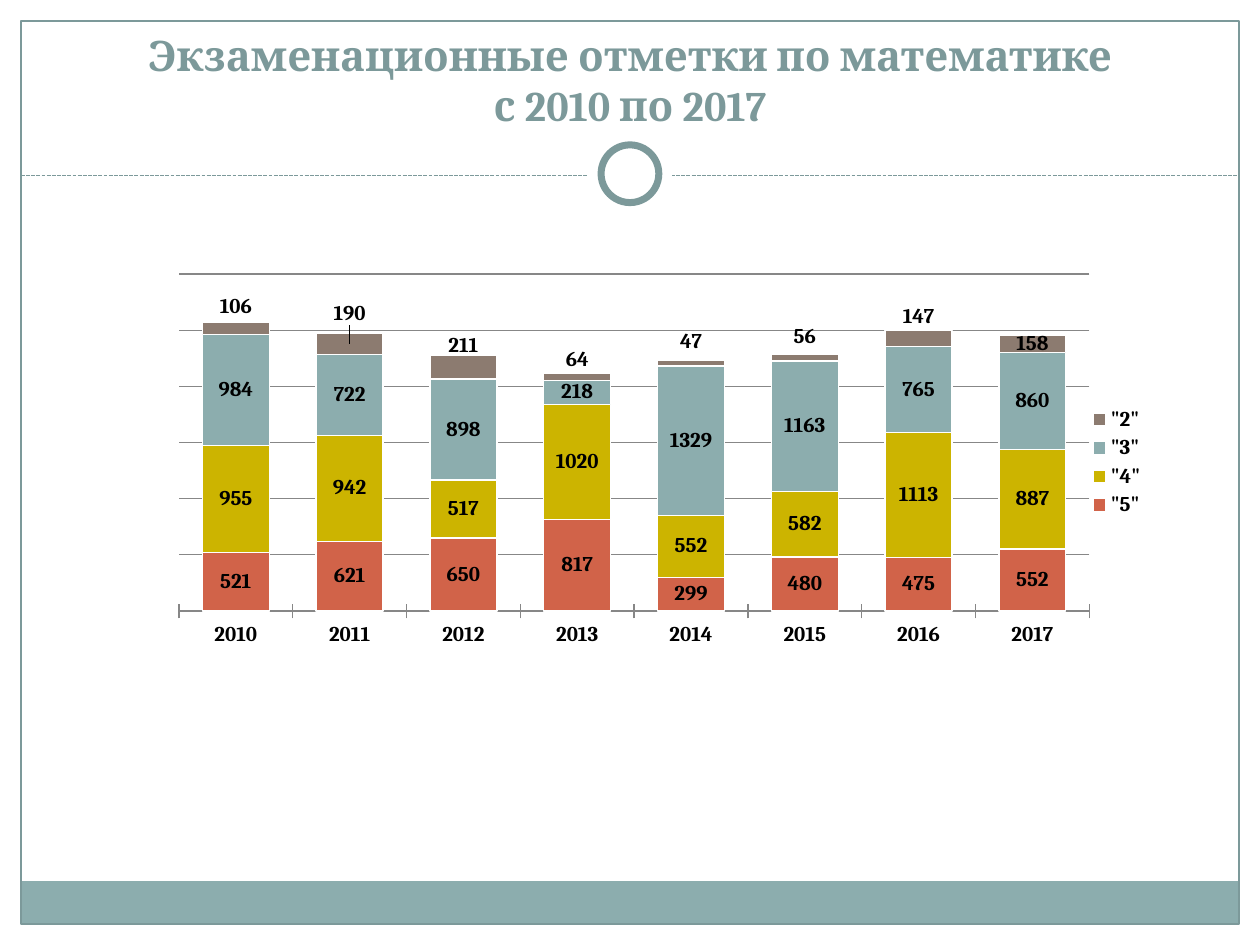
from lxml import etree
from pptx import Presentation
from pptx.chart.data import CategoryChartData
from pptx.dml.color import RGBColor
from pptx.enum.chart import XL_CHART_TYPE, XL_LEGEND_POSITION, XL_TICK_MARK
from pptx.enum.dml import MSO_LINE
from pptx.enum.shapes import MSO_CONNECTOR, MSO_SHAPE
from pptx.enum.text import MSO_ANCHOR, PP_ALIGN
from pptx.oxml.ns import qn
from pptx.util import Pt

STACK = XL_CHART_TYPE.COLUMN_STACKED
RIGHT = XL_LEGEND_POSITION.RIGHT
CROSS = XL_TICK_MARK.CROSS
DASH = MSO_LINE.SQUARE_DOT
LINE = MSO_CONNECTOR.STRAIGHT
RECT, OVAL = MSO_SHAPE.RECTANGLE, MSO_SHAPE.OVAL
BOTTOM, CENTER = MSO_ANCHOR.BOTTOM, PP_ALIGN.CENTER

FACE = "Cambria"
TEAL, PALE, WHITE, BLACK, GRAY = "7C999A", "8CADAE", "FFFFFF", "000000", "878787"
BOLD = {"size": Pt(12), "bold": True, "name": FACE}

YEARS = [str(year) for year in range(2010, 2018)]
MARKS = [
    ('"5"', "D16349", (521, 621, 650, 817, 299, 480, 475, 552)),
    ('"4"', "CCB400", (955, 942, 517, 1020, 552, 582, 1113, 887)),
    ('"3"', PALE, (984, 722, 898, 218, 1329, 1163, 765, 860)),
    ('"2"', "8C7B70", (106, 190, 211, 64, 47, 56, 147, 158)),
]
LIFTS = (-0.05, -0.07, -0.05, -0.04, -0.05, -0.05, -0.05)


def tint(part, code):
    part.solid()
    part.fore_color.rgb = RGBColor.from_string(code)


def style(item, values):
    for name, value in values.items():
        setattr(item, name, value)


def stroke(line, code, width):
    tint(line.fill, code)
    line.width = Pt(width)


def shape(slide, kind, box, fill=None, edge=None, width=0.75):
    item = slide.shapes.add_shape(kind, *map(Pt, box))
    item.shadow.inherit = False
    if fill:
        tint(item.fill, fill)
    else:
        item.fill.background()
    if edge:
        stroke(item.line, edge, width)
    else:
        item.line.fill.background()
    return item


def add_frame(slide, box):
    left, top, wide, high = box
    band = 24.5
    shape(slide, RECT, (left, top + high - band, wide, band), PALE)
    shape(slide, RECT, box, edge=TEAL)


def add_rule(slide, box):
    left, top, wide, high = box
    mid, axis = top + high / 2, left + wide / 2
    rule = slide.shapes.add_connector(LINE, Pt(left), Pt(mid), Pt(left + wide), Pt(mid))
    stroke(rule.line, TEAL, 0.75)
    rule.line.dash_style = DASH
    etree.SubElement(rule._element.spPr, qn("a:effectLst"))
    shape(slide, OVAL, (axis - high / 2, top, high, high), WHITE)
    ring = 33
    shape(slide, OVAL, (axis - ring / 2, mid - ring / 2 - 1.2, ring, ring), WHITE, TEAL, 4)


def add_title(slide, box, text):
    title = slide.shapes.title
    style(title, dict(zip(("left", "top", "width", "height"), map(Pt, box))))
    frame = title.text_frame
    style(frame, {"text": text, "vertical_anchor": BOTTOM, "word_wrap": True})
    para = frame.paragraphs[0]
    para.alignment = CENTER
    font = para.runs[0].font
    for run in para.runs:
        font = run.font
        style(font, {"size": Pt(24), "bold": True, "name": FACE})
        tint(font.fill, TEAL)


def set_layout(parent, spot, values):
    for old in parent.findall(qn("c:layout")):
        parent.remove(old)
    layout = etree.Element(qn("c:layout"))
    manual = etree.SubElement(layout, qn("c:manualLayout"))
    for name, value in values.items():
        etree.SubElement(manual, qn("c:" + name)).set("val", str(value))
    parent.insert(spot, layout)


def lift_labels(series):
    for index in range(len(LIFTS)):
        style(series.points[index].data_label.font, BOLD)
    for label, lift in zip(series._element.iter(qn("c:dLbl")), LIFTS):
        set_layout(label, 1, {"x": 0, "y": lift})


def add_graph(slide, box):
    data = CategoryChartData()
    data.categories = YEARS
    for name, _, values in MARKS:
        data.add_series(name, values)
    chart = slide.shapes.add_chart(STACK, *map(Pt, box), data).chart
    style(chart, {"has_title": False, "has_legend": True})
    style(chart.font, {"size": Pt(10), "name": FACE})
    tint(chart.font.fill, BLACK)
    style(chart.legend, {"position": RIGHT, "include_in_layout": False})
    style(chart.legend.font, BOLD)

    axis = chart.category_axis
    axis.major_tick_mark = CROSS
    style(axis.tick_labels.font, BOLD)
    stroke(axis.format.line, GRAY, 0.75)
    scale = chart.value_axis
    style(scale, {"visible": False, "minimum_scale": 0, "maximum_scale": 3000,
                  "major_unit": 500, "has_major_gridlines": True})
    stroke(scale.major_gridlines.format.line, GRAY, 0.75)

    plot = chart.plots[0]
    style(plot, {"gap_width": 70, "overlap": 100, "vary_by_categories": False})
    for series, (_, code, _) in zip(plot.series, MARKS):
        tint(series.format.fill, code)
        stroke(series.format.line, WHITE, 0.75)
        labels = series.data_labels
        labels.show_value = True
        style(labels.font, BOLD)
    lift_labels(plot.series[-1])
    area = chart._chartSpace.chart.plotArea
    set_layout(area, 0, {"layoutTarget": "inner", "xMode": "edge", "yMode": "edge",
                         "x": 0.024, "y": 0.058, "w": 0.908, "h": 0.791})


def main():
    deck = Presentation()
    style(deck, {"slide_width": Pt(720), "slide_height": Pt(540)})
    slide = deck.slides.add_slide(deck.slide_layouts[5])
    add_frame(slide, (12, 12, 696, 516))
    add_rule(slide, (12, 76.5, 696, 48))
    add_title(slide, (24, 18, 672, 60), "Экзаменационные отметки по математике\vс 2010 по 2017")
    add_graph(slide, (88.5, 142.5, 573, 243.5))
    deck.save("out.pptx")


if __name__ == "__main__":
    main()
